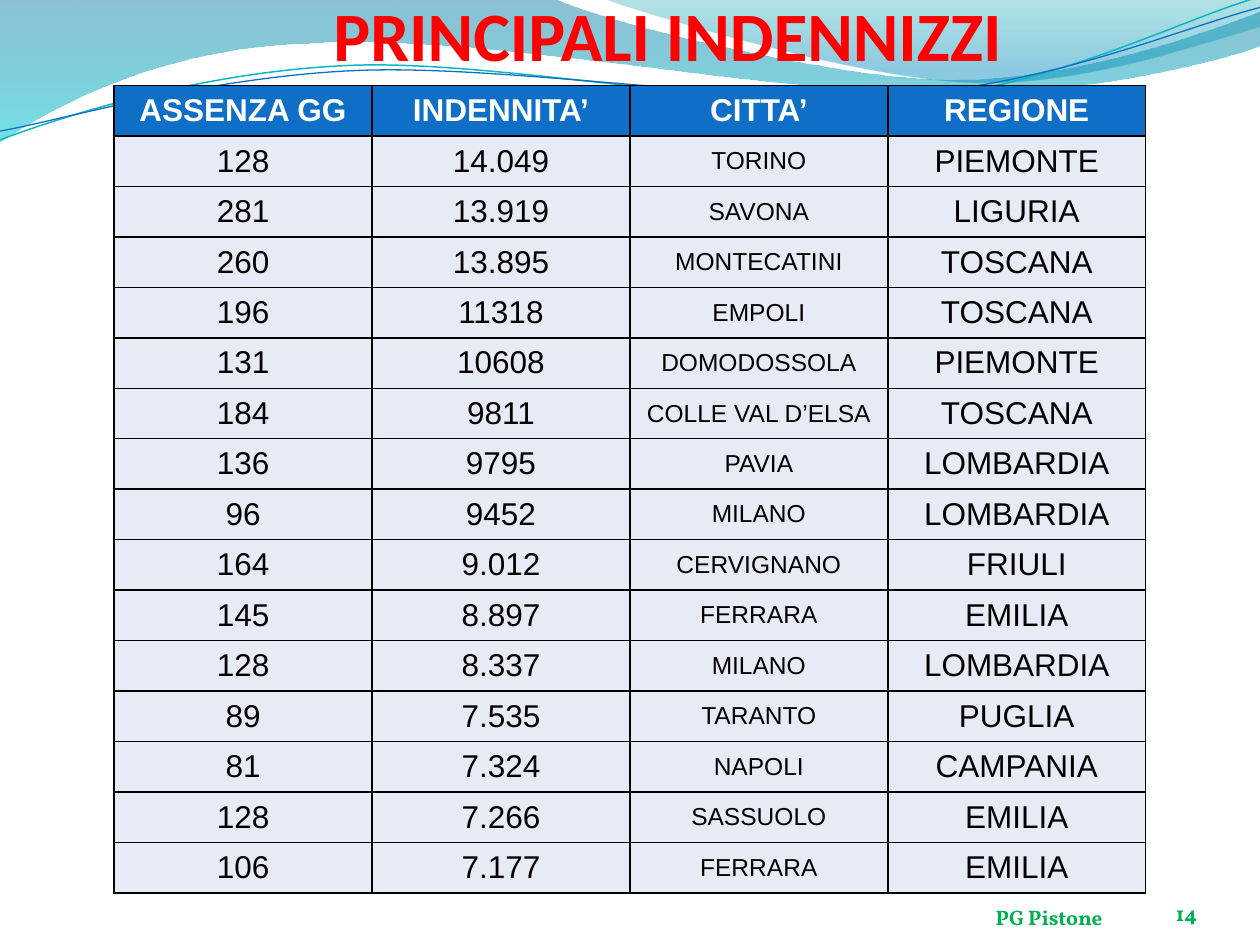
import math
from dataclasses import dataclass

from lxml import etree
from pptx import Presentation
from pptx.dml.color import RGBColor
from pptx.enum import text
from pptx.oxml import ns
from pptx.util import Pt

WHITE = RGBColor(0xFF, 0xFF, 0xFF)
BLACK = RGBColor(0x00, 0x00, 0x00)
RED = RGBColor(0xFF, 0x00, 0x00)
GREEN = RGBColor(0x00, 0xB0, 0x50)
BLUE = RGBColor(0x0F, 0x6F, 0xC6)
TEAL = RGBColor(0x0A, 0xB8, 0xBF)
PALE = RGBColor(0xE7, 0xEB, 0xF5)

Point = tuple[float, float]


@dataclass
class Stop:
    position: float
    color: RGBColor
    opacity: int  # percent


@dataclass
class Wave:
    """An outline in points: a segment of one point is a line, of three a Bezier curve."""
    start: Point
    segments: list[tuple[Point, ...]]
    stops: tuple[Stop, ...] = ()
    line: RGBColor | None = None
    weight: float = 0
    rotation: float = 0
    pivot: Point = (0, 0)


@dataclass
class Label:
    content: str
    left: float
    top: float
    width: float
    height: float
    size: float
    font: str
    color: RGBColor
    align: text.PP_ALIGN
    inset_top: float = 0


WAVES = [
    Wave((0, 0), [
        ((316.8, -0.7),),
        ((342.7, 12.2), (478.1, 45.4), (545.8, 45.4)),
        ((614.2, 45.4), (689.8, 18.7), (720, 6.5)),
        ((720.7, 25.9),),
        ((707.8, 31.7), (626.4, 54.7), (537.1, 54)),
        ((447.8, 54), (275, 20.2), (185, 24.5)),
        ((92.9, 25.9), (33.1, 59.8), (-0.7, 81.4)),
    ], stops=(Stop(0, RGBColor(0x00, 0x74, 0xA1), 45),
              Stop(1, RGBColor(0x00, 0xC6, 0xCF), 55))),
    Wave((344.9, -0.7), [
        ((366.5, 7.9), (491, 44.6), (553.7, 46.8)),
        ((616.3, 49.7), (691.9, 23), (720, 15.1)),
        ((720, 0),),
    ], stops=(Stop(0, RGBColor(0x00, 0xA1, 0xA9), 30),
              Stop(0.8, RGBColor(0x00, 0x8B, 0xBF), 45))),
    Wave((0, 79.9), [
        ((34.6, 67), (113.8, 41), (199.4, 37.4)),
        ((284.4, 33.8), (427, 64.1), (513.4, 57.6)),
        ((599.8, 51.1), (675.4, 10.8), (718.6, -1.4)),
    ], line=TEAL, weight=0.85, rotation=357.3, pivot=(359.3, 41.4)),
    Wave((0, 74.9), [
        ((33.8, 69.1), (118.1, 43.9), (203.8, 40.3)),
        ((290.2, 36.7), (429.8, 60.5), (516.2, 54)),
        ((601.9, 48.2), (677.5, 15.1), (720, 4.3)),
    ], line=BLUE, weight=0.75, rotation=357.3, pivot=(359.6, 42.5)),
]

LABELS = [
    Label("PRINCIPALI INDENNIZZI", 59.8, 0, 643.7, 43.2, 39.6, "Calibri", RED,
          text.PP_ALIGN.CENTER, inset_top=3.6),
    Label("PG Pistone", 365.8, 502.6, 264.2, 28.8, 12, "Vollkorn", GREEN,
          text.PP_ALIGN.RIGHT),
    Label("14", 624.2, 500.4, 59.8, 28.8, 12, "Vollkorn", GREEN,
          text.PP_ALIGN.RIGHT),
]

HEADER = ("ASSENZA GG", "INDENNITA’", "CITTA’", "REGIONE")
CLAIMS = [
    ("128", "14.049", "TORINO", "PIEMONTE"),
    ("281", "13.919", "SAVONA", "LIGURIA"),
    ("260", "13.895", "MONTECATINI", "TOSCANA"),
    ("196", "11318", "EMPOLI", "TOSCANA"),
    ("131", "10608", "DOMODOSSOLA", "PIEMONTE"),
    ("184", "9811", "COLLE VAL D’ELSA", "TOSCANA"),
    ("136", "9795", "PAVIA", "LOMBARDIA"),
    ("96", "9452", "MILANO", "LOMBARDIA"),
    ("164", "9.012", "CERVIGNANO", "FRIULI"),
    ("145", "8.897", "FERRARA", "EMILIA"),
    ("128", "8.337", "MILANO", "LOMBARDIA"),
    ("89", "7.535", "TARANTO", "PUGLIA"),
    ("81", "7.324", "NAPOLI", "CAMPANIA"),
    ("128", "7.266", "SASSUOLO", "EMILIA"),
    ("106", "7.177", "FERRARA", "EMILIA"),
]
CITY_COLUMN = 2
TABLE_LEFT, TABLE_TOP, TABLE_HEIGHT = 65.2, 48.9, 460.8
COLUMN_WIDTH, ROW_HEIGHT = 147.4, 28.68


def write(frame, content: str, *, size: float, font: str, color: RGBColor,
          bold: bool = False, align: text.PP_ALIGN = text.PP_ALIGN.CENTER) -> None:
    para = frame.paragraphs[0]
    para.alignment = align
    span = para.add_run()
    span.text = content
    span.font.size, span.font.name, span.font.bold = Pt(size), font, bold
    span.font.color.rgb = color


def unrotate(point: Point, wave: Wave) -> Point:
    """Place a point where it lies before the shape's own rotation."""
    angle = math.radians(-wave.rotation)
    dx, dy = point[0] - wave.pivot[0], point[1] - wave.pivot[1]
    return (Pt(wave.pivot[0] + dx * math.cos(angle) - dy * math.sin(angle)),
            Pt(wave.pivot[1] + dx * math.sin(angle) + dy * math.cos(angle)))


def bend(shape, segments: list[tuple[Point, ...]]) -> None:
    """Join the three lines of each curved segment into one Bezier curve."""
    lines = shape.element.iter(ns.qn("a:lnTo"))
    remaining = iter(list(lines))
    for segment in segments:
        parts = [next(remaining) for _ in segment]
        if len(parts) == 1:
            continue
        curve = etree.Element(ns.qn("a:cubicBezTo"))
        parts[0].addprevious(curve)
        for part in parts:
            curve.append(part[0])
            part.getparent().remove(part)


def draw_wave(page, wave: Wave) -> None:
    builder = page.shapes.build_freeform(*unrotate(wave.start, wave))
    builder.add_line_segments(
        [unrotate(point, wave) for segment in wave.segments for point in segment],
        close=bool(wave.stops))
    shape = builder.convert_to_shape()
    bend(shape, wave.segments)
    shape.rotation = wave.rotation
    shape.shadow.inherit = False
    if not wave.stops:
        shape.fill.background()
        shape.line.color.rgb = wave.line
        shape.line.width = Pt(wave.weight)
        return
    shape.line.fill.background()
    shape.fill.gradient()
    shape.fill.gradient_angle = 270  # top to bottom
    for target, stop in zip(shape.fill.gradient_stops, wave.stops):
        target.position, target.color.rgb = stop.position, stop.color
    for color, stop in zip(shape.element.iter(ns.qn("a:srgbClr")), wave.stops):
        etree.SubElement(color, ns.qn("a:alpha"), val=str(stop.opacity * 1000))


def draw_label(page, label: Label) -> None:
    box = page.shapes.add_textbox(Pt(label.left), Pt(label.top),
                                  Pt(label.width), Pt(label.height))
    frame = box.text_frame
    frame.word_wrap = True
    frame.vertical_anchor = text.MSO_ANCHOR.BOTTOM
    frame.margin_left = frame.margin_right = frame.margin_bottom = 0
    frame.margin_top = Pt(label.inset_top)
    write(frame, label.content, size=label.size, font=label.font,
          color=label.color, bold=True, align=label.align)


def add_borders(cell, color: RGBColor, width: float) -> None:
    properties = cell._tc.get_or_add_tcPr()
    for index, side in enumerate(("lnL", "lnR", "lnT", "lnB")):
        border = etree.Element(ns.qn(f"a:{side}"), w=str(Pt(width)))
        fill = etree.SubElement(border, ns.qn("a:solidFill"))
        etree.SubElement(fill, ns.qn("a:srgbClr"), val=str(color))
        properties.insert(index, border)


def draw_table(page) -> None:
    rows = [HEADER, *CLAIMS]
    holder = page.shapes.add_table(
        len(rows), len(HEADER), Pt(TABLE_LEFT), Pt(TABLE_TOP),
        Pt(COLUMN_WIDTH * len(HEADER)), Pt(TABLE_HEIGHT))
    table = holder.table
    table.horz_banding = False
    for column in table.columns:
        column.width = Pt(COLUMN_WIDTH)
    for r, values in enumerate(rows):
        table.rows[r].height = Pt(ROW_HEIGHT)
        header = r == 0
        for c, value in enumerate(values):
            cell = table.cell(r, c)
            cell.vertical_anchor = text.MSO_ANCHOR.MIDDLE
            cell.fill.solid()
            cell.fill.fore_color.rgb = BLUE if header else PALE
            add_borders(cell, BLACK, 1)
            write(cell.text_frame, value, font="Arial", bold=header,
                  size=14 if c == CITY_COLUMN and not header else 18,
                  color=WHITE if header else BLACK)


def main() -> None:
    deck = Presentation()
    deck.slide_width, deck.slide_height = Pt(720), Pt(540)
    page = deck.slides.add_slide(deck.slide_layouts[6])
    # Waves across the top
    for wave in WAVES:
        draw_wave(page, wave)
    # Title, author and page number
    for label in LABELS:
        draw_label(page, label)
    # Compensation table
    draw_table(page)
    deck.save("out.pptx")


if __name__ == "__main__":
    main()
